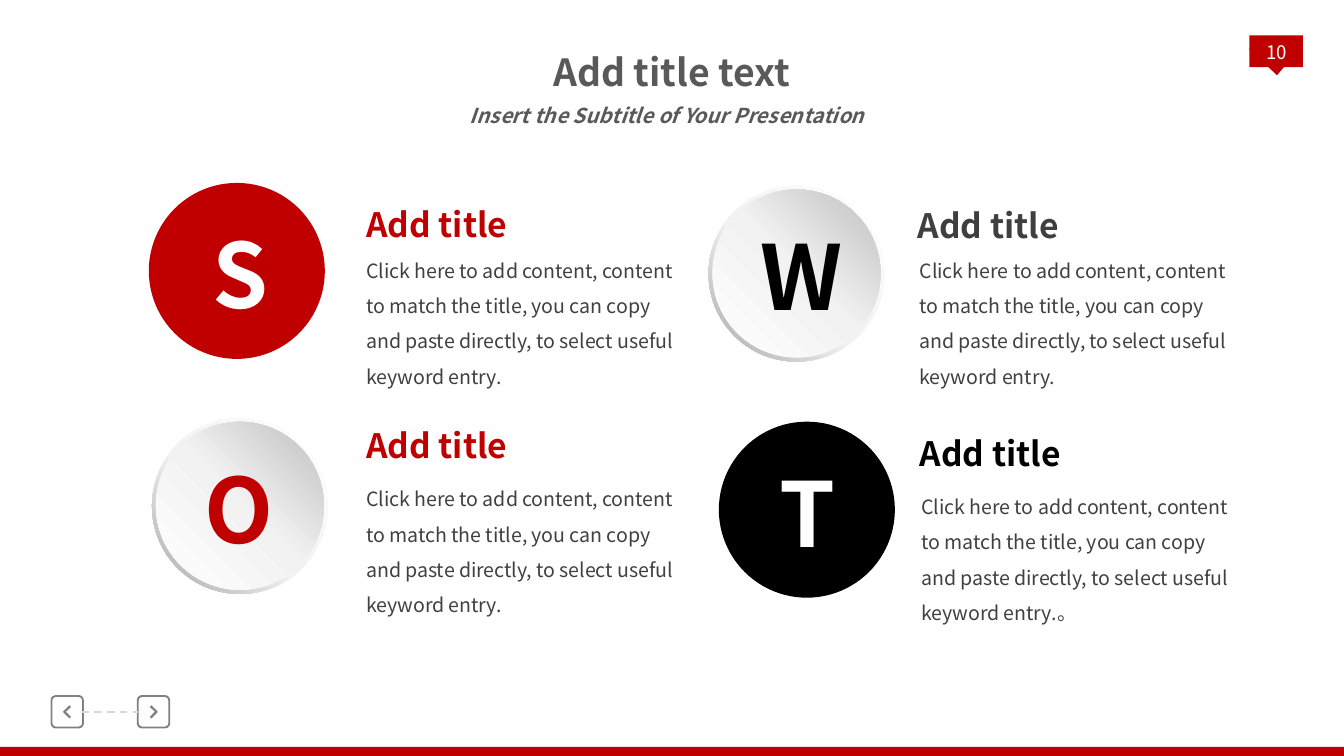
from lxml import etree
from copy import deepcopy
from pptx import Presentation
from pptx.dml.color import RGBColor
from pptx.enum import dml, shapes, text
from pptx.oxml.ns import qn
from pptx.util import Pt

FONT = "Noto Sans CJK SC"
COLORS = {
    "red": "C00000", "black": "000000", "white": "FFFFFF", "body": "404040",
    "charcoal": "3F3F3F", "title": "595959", "subtitle": "58595B",
    "icon": "808080", "dash": "D9D9D9", "light": "F2F2F2",
    "silver": "BFBFBF", "shade": "A6A6A6",
}
RIM_GRADIENT = (225, [(0, "white"), (0.55, "light"), (1, "shade")])
DISC_GRADIENT = (45, [(0, "white"), (0.51, "light"), (1, "silver")])
BODY = ("Click here to add content, content to match the title, you can copy "
        "and paste directly, to select useful keyword entry.")
SHAPE = shapes.MSO_SHAPE


def rgb(name):
    return RGBColor.from_string(COLORS[name])


def points(*values):
    return [Pt(value) for value in values]


def fill_gradient(shape, angle, stops):
    shape.fill.gradient()
    stop_list = shape.fill._xPr.find(qn("a:gradFill")).find(qn("a:gsLst"))
    stop_list.append(deepcopy(stop_list[0]))
    shape.fill.gradient_angle = angle
    for stop, (position, color) in zip(shape.fill.gradient_stops, stops):
        stop.position = position
        stop.color.rgb = rgb(color)


def add_shape(slide, kind, box, fill=None, line=None, adjustment=None):
    """Add a preset shape; fill is a colour name or an (angle, stops) gradient."""
    shape = slide.shapes.add_shape(kind, *points(*box))
    shape.shadow.inherit = False
    if fill is None:
        shape.fill.background()
    elif isinstance(fill, tuple):
        fill_gradient(shape, *fill)
    else:
        shape.fill.solid()
        shape.fill.fore_color.rgb = rgb(fill)
    if line:
        shape.line.color.rgb = rgb(line)
        shape.line.width = Pt(1)
    else:
        shape.line.fill.background()
    if adjustment is not None:
        shape.adjustments[0] = adjustment
    return shape


def add_text(slide, content, box, size, color, bold=False, italic=False,
             centered=False, spacing=None, insets=None, wrap=True,
             middle=False, grow=True):
    frame = slide.shapes.add_textbox(*points(*box)).text_frame
    frame.word_wrap = wrap
    if grow:
        frame.auto_size = text.MSO_AUTO_SIZE.SHAPE_TO_FIT_TEXT
    if middle:
        frame.vertical_anchor = text.MSO_ANCHOR.MIDDLE
    if insets:
        (frame.margin_left, frame.margin_top,
         frame.margin_right, frame.margin_bottom) = points(*insets)
    paragraph = frame.paragraphs[0]
    if centered:
        paragraph.alignment = text.PP_ALIGN.CENTER
    if spacing:
        paragraph.line_spacing = spacing
    run = paragraph.add_run()
    run.text = content
    run.font.name = FONT
    run.font.size = Pt(size)
    run.font.bold = bold
    run.font.italic = italic
    run.font.color.rgb = rgb(color)
    etree.SubElement(run.font._element, qn("a:ea"), typeface=FONT)


def add_header(slide, left, top, width):
    add_text(slide, "Add title text", (left + 40.3, top, 158.4, 24.5), 20,
             "title", bold=True, centered=True, insets=(0, 0, 0, 0))
    add_text(slide, "Insert the Subtitle of Your Presentation",
             (left, top + 25.2, width, 20.9), 11, "subtitle",
             bold=True, italic=True, centered=True, wrap=False)


def add_page_marker(slide, left, top, width):
    add_shape(slide, SHAPE.RECTANGLE, (left, top, width, 17), "red")
    pointer = add_shape(slide, SHAPE.ISOSCELES_TRIANGLE,
                        (left, top + 6.2, width, 15.1), "red")
    pointer.rotation = 176.8
    add_text(slide, "10", (left + 1.3, top - 3.2, width - 2.2, 27.4), 10,
             "white", centered=True, middle=True, grow=False,
             insets=(0, 0, 0, 3.6))


def add_arrow_button(slide, left, top, size, direction):
    """Draw a framed chevron; direction is -1 for left and 1 for right."""
    add_shape(slide, SHAPE.ROUNDED_RECTANGLE, (left, top, size, size),
              line="icon", adjustment=0.14)
    middle_x, middle_y = left + size / 2, top + size / 2
    tail, tip = middle_x - 1.6 * direction, middle_x + 1.6 * direction
    builder = slide.shapes.build_freeform(Pt(tail), Pt(middle_y - 3.1))
    builder.add_line_segments(
        [points(tip, middle_y), points(tail, middle_y + 3.1)], close=False)
    chevron = builder.convert_to_shape()
    chevron.shadow.inherit = False
    chevron.fill.background()
    chevron.line.color.rgb = rgb("icon")
    chevron.line.width = Pt(1.2)


def add_navigation(slide, left, top, width):
    size = 16.9
    middle = top + size / 2
    add_arrow_button(slide, left, top, size, -1)
    add_arrow_button(slide, left + width - size, top, size, 1)
    connector = slide.shapes.add_connector(
        shapes.MSO_CONNECTOR.STRAIGHT,
        *points(left + size - 1, middle, left + width - size, middle))
    connector.line.color.rgb = rgb("dash")
    connector.line.width = Pt(1)
    connector.line.dash_style = dml.MSO_LINE.DASH
    etree.SubElement(connector._element.spPr, qn("a:effectLst"))


def add_badge(slide, left, top, letter, letter_color, fill, shift):
    """Draw a rimmed disc with a letter, moved sideways by shift."""
    rim, disc = (fill, fill) if fill else (RIM_GRADIENT, DISC_GRADIENT)
    add_shape(slide, SHAPE.DONUT, (left, top, 94.3, 94.3), rim, adjustment=0.049)
    add_shape(slide, SHAPE.OVAL, (left + 2.1, top + 2.1, 90, 90), disc)
    add_text(slide, letter, (left + shift, top + 19.2, 99.4, 58.3), 48,
             letter_color, bold=True, centered=True, insets=(0, 0, 0, 0))


def add_entry(slide, left, top, color, body, indent, drop):
    """Write a heading and, drop points lower, its body text."""
    add_text(slide, body, (left + indent, top + drop, 180, 81.4), 10.5, "body",
             spacing=1.5)
    add_text(slide, "Add title", (left, top, 152, 28.8), 18, color, bold=True)


def main():
    presentation = Presentation()
    presentation.slide_width, presentation.slide_height = points(720, 405)
    slide = presentation.slides.add_slide(presentation.slide_layouts[6])

    add_shape(slide, SHAPE.RECTANGLE, (0, 400.1, 720, 4.9), "red")
    add_page_marker(slide, 669.3, 19, 28.8)
    add_navigation(slide, 27.6, 372.9, 63.1)
    add_header(slide, 240.5, 26.6, 234)

    badges = [
        (79.7, 98, "S", "white", "red", -0.5),
        (379.6, 99.4, "W", "black", None, 0),
        (81.4, 223.9, "O", "red", None, -3),
        (385.1, 225.9, "T", "white", "black", -2),
    ]
    entries = [
        (189.2, 105.8, "red", BODY, 0, 23.1),
        (484.6, 106.2, "charcoal", BODY, 1, 22.7),
        (189.2, 224.2, "red", BODY, 0, 27),
        (485.6, 228.4, "black", BODY + "。", 1, 27),
    ]
    for badge, entry in zip(badges, entries):
        add_badge(slide, *badge)
        add_entry(slide, *entry)

    presentation.save("out.pptx")


if __name__ == "__main__":
    main()
